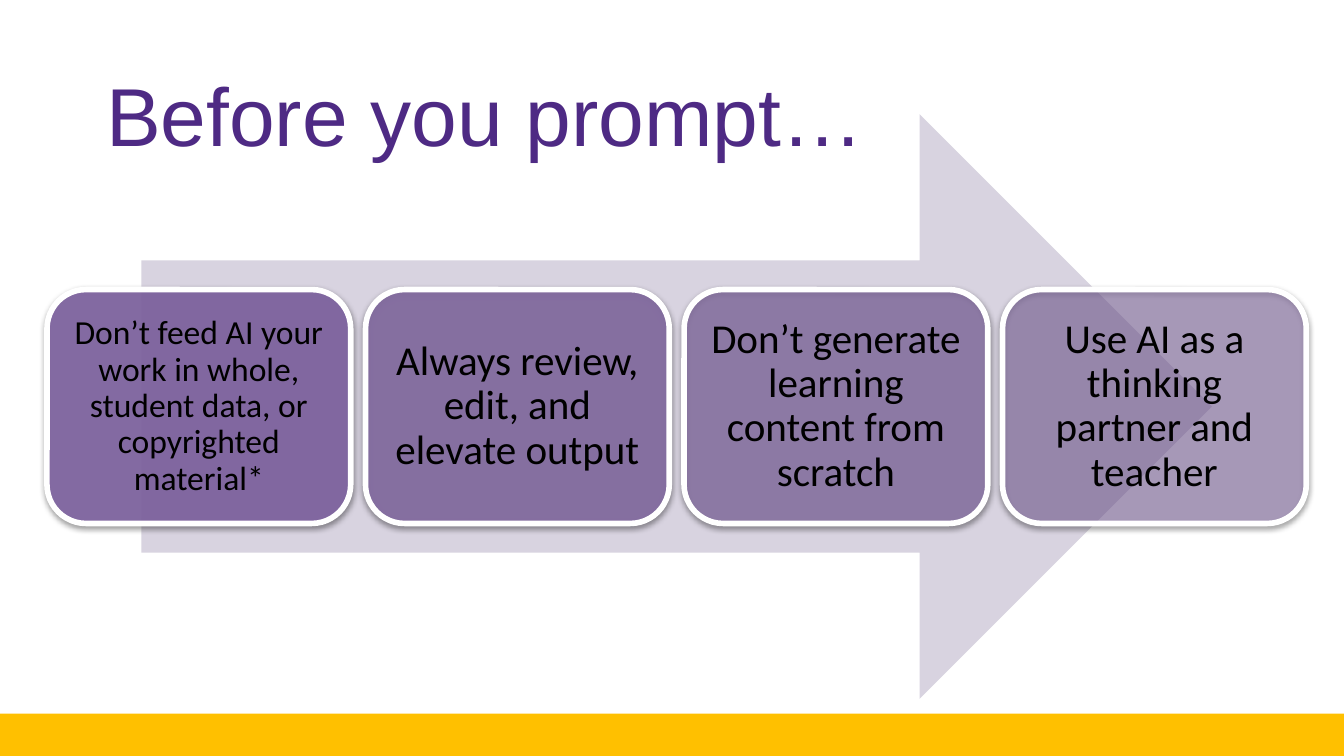
from lxml.etree import SubElement
from pptx import Presentation
from pptx.dml.color import RGBColor
from pptx.enum.shapes import MSO_SHAPE
from pptx.enum.text import MSO_ANCHOR, PP_ALIGN
from pptx.oxml.ns import qn
from pptx.util import Inches, Pt

COLORS = {
    "title": "4E2A84",
    "footer": "FFC000",
    "arrow": "D8D3E0",
    "card": "8064A2",
    "outline": "FFFFFF",
    "text": "000000",
    "shadow": "000000",
}

CARDS = [
    ("Don’t feed AI your work in whole, student data, or copyrighted material*", 18, 0.07, 90),
    ("Always review, edit, and elevate output", 22, 0.09, 77),
    ("Don’t generate learning content from scratch", 22, 0.09, 63),
    ("Use AI as a thinking partner and teacher", 22, 0.09, 50),
]


def write_text(shape, text, *, size, font, color, align, inset=None, line_spacing=None):
    frame = shape.text_frame
    frame.word_wrap = True
    frame.vertical_anchor = MSO_ANCHOR.MIDDLE
    if inset is not None:
        frame.margin_left = frame.margin_right = Inches(inset)
        frame.margin_top = frame.margin_bottom = Inches(inset)
    paragraph = frame.paragraphs[0]
    paragraph.alignment = align
    if line_spacing:
        paragraph.line_spacing = line_spacing
    run = paragraph.add_run()
    run.text = text
    run.font.size = Pt(size)
    run.font.name = font
    run.font.color.rgb = RGBColor.from_string(COLORS[color])


def add_block(slide, kind, left, top, width, height, color):
    shape = slide.shapes.add_shape(
        kind, Inches(left), Inches(top), Inches(width), Inches(height)
    )
    shape.shadow.inherit = False
    shape.fill.solid()
    shape.fill.fore_color.rgb = RGBColor.from_string(COLORS[color])
    shape.line.fill.background()
    return shape


def set_opacity(shape, percent):
    color = shape._element.spPr.find(qn("a:solidFill")).find(qn("a:srgbClr"))
    SubElement(color, qn("a:alpha"), val=str(percent * 1000))


def add_drop_shadow(shape):
    effects = shape._element.spPr.find(qn("a:effectLst"))
    shadow = SubElement(
        effects, qn("a:outerShdw"), blurRad=str(Pt(3.1)), dist=str(Pt(1.6)),
        dir="5400000", rotWithShape="0",
    )
    color = SubElement(shadow, qn("a:srgbClr"), val=COLORS["shadow"])
    SubElement(color, qn("a:alpha"), val="38000")


def add_title(slide, left, top, width, height):
    title = slide.shapes.title
    title.left, title.top = Inches(left), Inches(top)
    title.width, title.height = Inches(width), Inches(height)
    write_text(title, "Before you prompt…", size=44, font="Arial",
               color="title", align=PP_ALIGN.LEFT)


def add_card(slide, left, top, width, height, text, size, inset, opacity):
    card = add_block(slide, MSO_SHAPE.ROUNDED_RECTANGLE, left, top, width, height, "card")
    set_opacity(card, opacity)
    card.line.color.rgb = RGBColor.from_string(COLORS["outline"])
    card.line.width = Pt(3)
    add_drop_shadow(card)
    border = height * 0.05
    label = slide.shapes.add_textbox(
        Inches(left + border), Inches(top + border),
        Inches(width - 2 * border), Inches(height - 2 * border),
    )
    write_text(label, text, size=size, font="Calibri", color="text",
               align=PP_ALIGN.CENTER, inset=inset, line_spacing=0.9)


def add_process(slide, left, top, width, height):
    arrow_width = width * 0.85
    add_block(slide, MSO_SHAPE.RIGHT_ARROW, left + (width - arrow_width) / 2, top,
              arrow_width, height, "arrow")
    gap = 0.11
    card_width = (width - gap * (len(CARDS) - 1)) / len(CARDS)
    card_height = height * 0.4
    card_top = top + (height - card_height) / 2
    for index, card in enumerate(CARDS):
        card_left = left + index * (card_width + gap)
        add_card(slide, card_left, card_top, card_width, card_height, *card)


def main():
    presentation = Presentation()
    presentation.slide_width = Inches(10)
    presentation.slide_height = Inches(10 * 9 / 16)
    slide = presentation.slides.add_slide(presentation.slide_layouts[5])
    add_block(slide, MSO_SHAPE.RECTANGLE, -0.03, 5.31, 10.03, 0.32, "footer")
    add_title(slide, 0.69, 0.3, 8.62, 1.09)
    add_process(slide, 0.35, 0.85, 9.37, 4.35)
    presentation.save("out.pptx")


if __name__ == "__main__":
    main()
